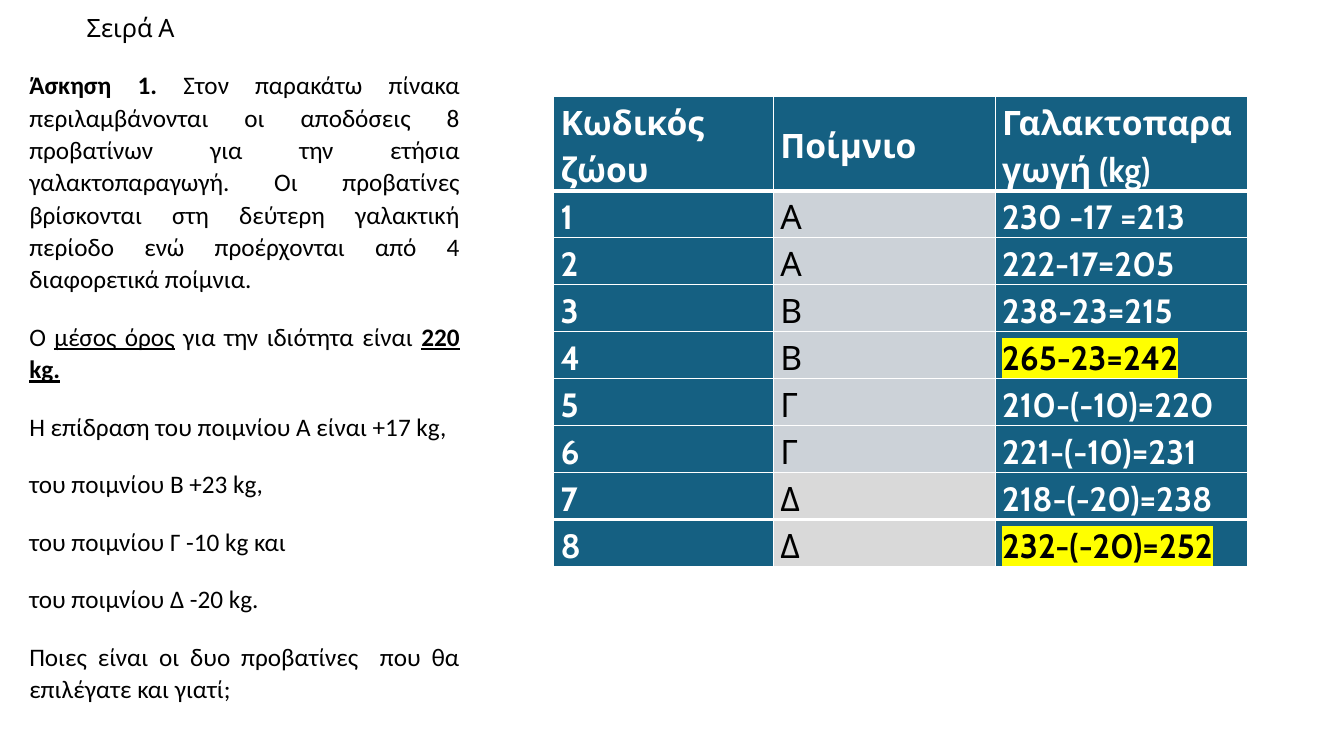
from lxml import etree
from pptx import Presentation
from pptx.dml.color import RGBColor
from pptx.enum.text import MSO_ANCHOR, MSO_AUTO_SIZE, PP_ALIGN
from pptx.oxml.ns import qn
from pptx.util import Inches, Pt

TOP, MIDDLE = MSO_ANCHOR.TOP, MSO_ANCHOR.MIDDLE
LEFT, JUSTIFY = PP_ALIGN.LEFT, PP_ALIGN.JUSTIFY
NO_FIT = MSO_AUTO_SIZE.NONE

COLORS = {"black": "000000", "white": "FFFFFF", "blue": "156082",
          "flock": "CCD2D8", "last_flock": "D9D9D9", "mark": "FFFF00"}

# Each paragraph is a list of (text, bold, underline)
EXERCISE = [
    [("Άσκηση 1.", True, False),
     (" Στον παρακάτω πίνακα περιλαμβάνονται οι αποδόσεις 8 προβατίνων για την "
      "ετήσια γαλακτοπαραγωγή. Οι προβατίνες βρίσκονται στη δεύτερη γαλακτική "
      "περίοδο ενώ προέρχονται από 4 διαφορετικά ποίμνια.", False, False)],
    [("Ο ", False, False), ("μέσος όρος", False, True),
     (" για την ιδιότητα είναι ", False, False), ("220 kg.", True, True)],
    [("Η επίδραση του ποιμνίου Α είναι +17 kg,", False, False)],
    [("του ποιμνίου Β +23 kg,", False, False)],
    [("του ποιμνίου Γ -10 kg και", False, False)],
    [("του ποιμνίου Δ -20 kg.", False, False)],
    [("Ποιες είναι οι δυο προβατίνες  που θα επιλέγατε και γιατί;", False, False)],
]

HEADINGS = ("Κωδικός ζώου", "Ποίμνιο", "Γαλακτοπαραγωγή (kg)")
FLOCKS = "ΑΑΒΒΓΓΔΔ"
YIELDS = ("230 -17 =213", "222-17=205", "238-23=215", "265-23=242",
          "210-(-10)=220", "221-(-10)=231", "218-(-20)=238", "232-(-20)=252")
SELECTED_EWES = (4, 8)
COLUMN_WIDTHS = (2.18, 2.2, 2.5)
HEADING_HEIGHT, ROW_HEIGHT = 0.91, 0.46


def rgb(name):
    return RGBColor.from_string(COLORS[name])


def style_font(paragraph, face, size, color, bold=False):
    font = paragraph.font
    font.name, font.size, font.bold = face, Pt(size), bold
    font.color.rgb = rgb(color)


def add_color(parent, tag, name):
    holder = etree.SubElement(parent, qn(tag))
    etree.SubElement(holder, qn("a:srgbClr"), val=COLORS[name])


def place(placeholder, left, top, width, height):
    placeholder.left, placeholder.top = Inches(left), Inches(top)
    placeholder.width, placeholder.height = Inches(width), Inches(height)
    frame = placeholder.text_frame
    frame.word_wrap, frame.auto_size = True, NO_FIT
    frame.vertical_anchor = TOP
    return frame


def build_series_title(title, *box):
    paragraph = place(title, *box).paragraphs[0]
    paragraph.text = "Σειρά Α"
    paragraph.alignment = LEFT
    style_font(paragraph, "Cabin", 18, "black")


def build_exercise(body, *box):
    frame = place(body, *box)
    for number, parts in enumerate(EXERCISE):
        paragraph = frame.add_paragraph() if number else frame.paragraphs[0]
        paragraph.alignment, paragraph.line_spacing = JUSTIFY, 1.07
        paragraph.space_before, paragraph.space_after = Pt(10), Pt(8)
        style_font(paragraph, "Calibri", 18, "black")
        # No bullet and no hanging indent
        properties = paragraph.font._element.getparent()
        properties.set("marL", "0")
        properties.set("indent", "0")
        properties.find(qn("a:defRPr")).addprevious(
            etree.Element(qn("a:buNone")))
        for text, bold, underline in parts:
            run = paragraph.add_run()
            run.text = text
            run.font.bold, run.font.underline = bold, underline


def draw_borders(cell, top, bottom):
    properties = cell._tc.get_or_add_tcPr()
    for side, width in (("L", 1), ("R", 1), ("T", top), ("B", bottom)):
        line = etree.SubElement(properties, qn("a:ln" + side), w=str(Pt(width)))
        add_color(line, "a:solidFill", "white")


def fill_cell(cell, text, fill, color, bold, marked):
    cell.fill.solid()
    cell.fill.fore_color.rgb = rgb(fill)
    cell.margin_left = cell.margin_right = Inches(0.07)
    cell.margin_top = cell.margin_bottom = 0
    paragraph = cell.text_frame.paragraphs[0]
    paragraph.line_spacing, paragraph.space_after = 1.15, Pt(10)
    style_font(paragraph, "Cabin", 24, color, bold)
    run = paragraph.add_run()
    run.text = text
    if marked:
        add_color(run.font._element, "a:highlight", "mark")


def build_yield_table(slide, left, top, width, height):
    rows = [HEADINGS] + [(str(ewe), flock, milk) for ewe, (flock, milk)
                         in enumerate(zip(FLOCKS, YIELDS), start=1)]
    last = len(rows) - 1
    table = slide.shapes.add_table(len(rows), len(HEADINGS), Inches(left),
                                   Inches(top), Inches(width),
                                   Inches(height)).table
    table.horz_banding = False
    for column, column_width in zip(table.columns, COLUMN_WIDTHS):
        column.width = Inches(column_width)
    for r, values in enumerate(rows):
        table.rows[r].height = Inches(ROW_HEIGHT if r else HEADING_HEIGHT)
        for c, text in enumerate(values):
            cell = table.cell(r, c)
            # Thick rules under the headings and above the last row
            draw_borders(cell, 3 if r in (1, last) else 1,
                         3 if r in (0, last - 1) else 1)
            is_flock = r > 0 and c == 1
            marked = r in SELECTED_EWES and c == 2
            flock_fill = "last_flock" if text == "Δ" else "flock"
            fill_cell(cell, text, flock_fill if is_flock else "blue",
                      "black" if is_flock or marked else "white",
                      not is_flock, marked)
            cell.vertical_anchor = TOP if r else MIDDLE


def main():
    deck = Presentation()
    deck.slide_width, deck.slide_height = Inches(13.33), Inches(7.5)
    slide = deck.slides.add_slide(deck.slide_layouts[1])
    build_exercise(slide.placeholders[1], 0.19, 0.62, 4.47, 6.98)
    build_series_title(slide.shapes.title, 0.76, 0.07, 3.41, 0.41)
    build_yield_table(slide, 5.49, 0.96, sum(COLUMN_WIDTHS),
                      HEADING_HEIGHT + len(YIELDS) * ROW_HEIGHT)
    deck.save("out.pptx")


if __name__ == "__main__":
    main()
